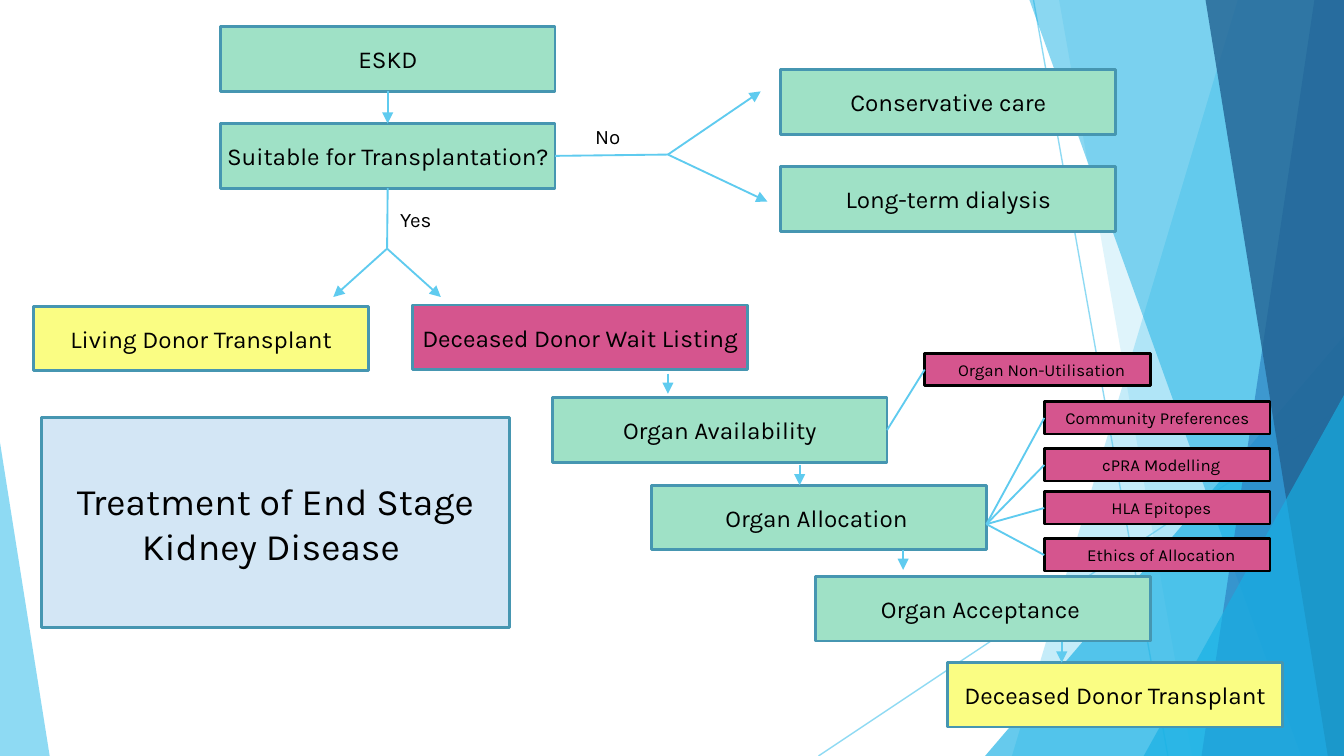
import pptx
import pptx.util
import pptx.dml.color
import pptx.enum.shapes
import pptx.enum.text
import pptx.oxml.ns
from lxml import etree

RGBColor = pptx.dml.color.RGBColor
SHAPE = pptx.enum.shapes.MSO_SHAPE
ALIGN = pptx.enum.text.PP_ALIGN
ANCHOR = pptx.enum.text.MSO_ANCHOR
qn = pptx.oxml.ns.qn

BLACK = RGBColor(0x00, 0x00, 0x00)
SKY = RGBColor(0x5F, 0xCB, 0xEF)
CYAN = RGBColor(0x17, 0xB0, 0xE4)
BLUE = RGBColor(0x2E, 0x83, 0xC3)
NAVY = RGBColor(0x22, 0x62, 0x92)
TEAL = RGBColor(0x46, 0x96, 0xB1)
MINT = RGBColor(0x9F, 0xE1, 0xC6)
YELLOW = RGBColor(0xFA, 0xFD, 0x83)
PINK = RGBColor(0xD5, 0x55, 0x8E)
PALE = RGBColor(0xD3, 0xE6, 0xF5)

# Square grid cells, ten to the inch
CELL = pptx.util.Inches(0.1)
COLUMNS, ROWS = 100, 56.25
TOP, LEFT, BOTTOM, RIGHT = range(4)


def cells(*counts):
    return [round(count * CELL) for count in counts]


class Flowchart:
    """Holds the style and the current slide; positions are in grid cells."""
    font = "Karla"
    step_size = (24.9, 4.8)
    factor_size = (16.8, 2.4)

    def __init__(self, slide):
        self.slide = slide
        self.shapes = slide.shapes

    def fade(self, shape, opacity):
        colour = shape.element.spPr.find(".//" + qn("a:srgbClr"))
        etree.SubElement(colour, qn("a:alpha")).set("val", str(opacity * 1000))

    def paint(self, shape, fill, outline=None, opacity=100):
        shape.shadow.inherit = False
        shape.fill.solid()
        shape.fill.fore_color.rgb = fill
        if opacity < 100:
            self.fade(shape, opacity)
        if outline is None:
            shape.line.fill.background()
        else:
            shape.line.color.rgb = outline
            shape.line.width = pptx.util.Pt(1.5)

    def set_text(self, shape, text, size, align=ALIGN.CENTER):
        frame = shape.text_frame
        frame.word_wrap = True
        frame.auto_size = pptx.enum.text.MSO_AUTO_SIZE.NONE
        frame.text = text
        paragraph = frame.paragraphs[0]
        paragraph.alignment = align
        for run in paragraph.runs:
            run.font.name = self.font
            run.font.size = pptx.util.Pt(size)
            run.font.color.rgb = BLACK
        return frame

    def facet(self, corners, colour, opacity):
        points = [cells(*corner) for corner in corners]
        builder = self.shapes.build_freeform(*points[0], scale=1.0)
        builder.add_line_segments(points[1:], close=True)
        self.paint(builder.convert_to_shape(), colour, opacity=opacity)

    def triangle(self, left, top, width, apex, colour, opacity):
        shape = self.shapes.add_shape(SHAPE.ISOSCELES_TRIANGLE,
                                      *cells(left, top, width, ROWS - top))
        shape.adjustments[0] = apex
        self.paint(shape, colour, opacity=opacity)

    def box(self, left, top, size, fill, outline=TEAL):
        shape = self.shapes.add_shape(SHAPE.RECTANGLE, *cells(left, top, *size))
        self.paint(shape, fill, outline)
        return shape

    def caption(self, shape, text, size, left_inset=0):
        frame = self.set_text(shape, text, size)
        frame.vertical_anchor = ANCHOR.MIDDLE
        frame.margin_right = frame.margin_top = frame.margin_bottom = 0
        frame.margin_left = pptx.util.Inches(left_inset)

    def step(self, left, top, text, fill=MINT):
        shape = self.box(left, top, self.step_size, fill)
        self.caption(shape, text, 13)
        return shape

    def factor(self, left, top, text, left_inset=0.06):
        shape = self.box(left, top, self.factor_size, PINK, BLACK)
        self.caption(shape, text, 9, left_inset)
        return shape

    def line(self, start, end, arrow=False, width=1, opacity=100):
        """Each end is a grid point or a (shape, side) pair to join."""
        joined = [not isinstance(place[0], (int, float))
                  for place in (start, end)]
        ends = [(0, 0) if join else cells(*place)
                for place, join in zip((start, end), joined)]
        connector = self.shapes.add_connector(
            pptx.enum.shapes.MSO_CONNECTOR.STRAIGHT, *ends[0], *ends[1])
        if joined[0]:
            connector.begin_connect(*start)
        if joined[1]:
            connector.end_connect(*end)
        connector.line.color.rgb = SKY
        connector.line.width = pptx.util.Pt(width)
        properties = connector.element.spPr
        if opacity < 100:
            self.fade(connector, opacity)
        if arrow:
            outline = properties.find(qn("a:ln"))
            etree.SubElement(outline, qn("a:tailEnd")).set("type", "triangle")
        etree.SubElement(properties, qn("a:effectLst"))

    def label(self, left, top, text):
        shape = self.shapes.add_textbox(*cells(left, top, 7.6, 2.9))
        self.set_text(shape, text, 11, ALIGN.LEFT)

    def title(self, left, top, width, height, text):
        title = self.shapes.title
        title.left, title.top, title.width, title.height = cells(
            left, top, width, height)
        self.shapes.element.append(title.element)  # in front of its panel
        title.fill.solid()
        title.fill.fore_color.rgb = PALE
        self.set_text(title, text, 20).vertical_anchor = ANCHOR.MIDDLE


def draw_background(chart):
    chart.line((76.9, 0), (86.9, ROWS), width=0.75, opacity=70)
    chart.line((COLUMNS, 30.2), (60.9, ROWS), width=0.75, opacity=70)

    def bands(rows):
        for top_left, bottom_left, colour, opacity in rows:
            chart.facet([(top_left, 0), (COLUMNS, 0), (COLUMNS, ROWS),
                         (bottom_left, ROWS)], colour, opacity)

    bands([(92.1, 75.3, SKY, 36), (78.8, 88.7, SKY, 20)])
    chart.triangle(73.3, 25, 26.7, 1, CYAN, 66)
    bands([(76.6, 96.8, CYAN, 50), (97.8, 89.4, BLUE, 70),
           (89.7, 98.8, NAVY, 80)])
    chart.triangle(85.1, 29.4, 14.9, 1, CYAN, 66)
    chart.triangle(0, 32.9, 3.7, 0, SKY, 70)


def draw_pathway(chart):
    # Suitability decision
    eskd = chart.step(16.4, 2, "ESKD")
    suitable = chart.step(16.4, 9.2, "Suitable for Transplantation?")
    chart.line((eskd, BOTTOM), (suitable, TOP), arrow=True)

    # Not suitable
    no_fork = (49.7, 11.5)
    chart.step(58.1, 5.2, "Conservative care")
    chart.step(58.1, 12.4, "Long-term dialysis")
    chart.line((suitable, RIGHT), no_fork)
    for tip in [(56.6, 6.8), (57.1, 15)]:
        chart.line(no_fork, tip, arrow=True)
    chart.label(43.3, 8.7, "No")

    # Suitable
    yes_fork = (28.8, 18.5)
    chart.step(2.5, 22.8, "Living Donor Transplant", YELLOW)
    chart.step(30.7, 22.7, "Deceased Donor Wait Listing", PINK)
    chart.line((suitable, BOTTOM), yes_fork)
    for tip in [(24.8, 22.1), (32.8, 22.1)]:
        chart.line(yes_fork, tip, arrow=True)
    chart.label(28.8, 14.9, "Yes")

    # Deceased donor cascade
    availability = chart.step(41.1, 29.6, "Organ Availability")
    chart.step(48.5, 36.1, "Organ Allocation ")
    chart.step(60.7, 42.9, "Organ Acceptance ")
    chart.step(70.5, 49.3, "Deceased Donor Transplant", YELLOW)
    for column, row in [(49.7, 27.8), (59.5, 34.6), (67.2, 40.9), (79, 47.8)]:
        chart.line((column, row), (column, row + 1.5), arrow=True)

    # Factors acting on the cascade
    non_utilisation = chart.factor(68.8, 26.3, "Organ Non-Utilisation")
    chart.line((availability, RIGHT), (non_utilisation, LEFT))
    for row, text, inset in [(29.9, "Community Preferences", 0),
                             (33.4, "cPRA Modelling", 0.06),
                             (36.6, "HLA Epitopes", 0.06),
                             (40.1, "Ethics of Allocation", 0.06)]:
        factor = chart.factor(77.7, row, text, inset)
        chart.line((73.4, 39), (factor, LEFT))


def main():
    deck = pptx.Presentation()
    deck.slide_width, deck.slide_height = cells(COLUMNS, ROWS)
    chart = Flowchart(deck.slides.add_slide(deck.slide_layouts[5]))
    draw_background(chart)
    draw_pathway(chart)

    # Title panel
    chart.box(3.1, 31.1, (34.8, 15.6), PALE)
    chart.title(4.3, 35.1, 32.4, 7.7, "Treatment of End Stage Kidney Disease ")
    deck.save("out.pptx")


if __name__ == "__main__":
    main()
